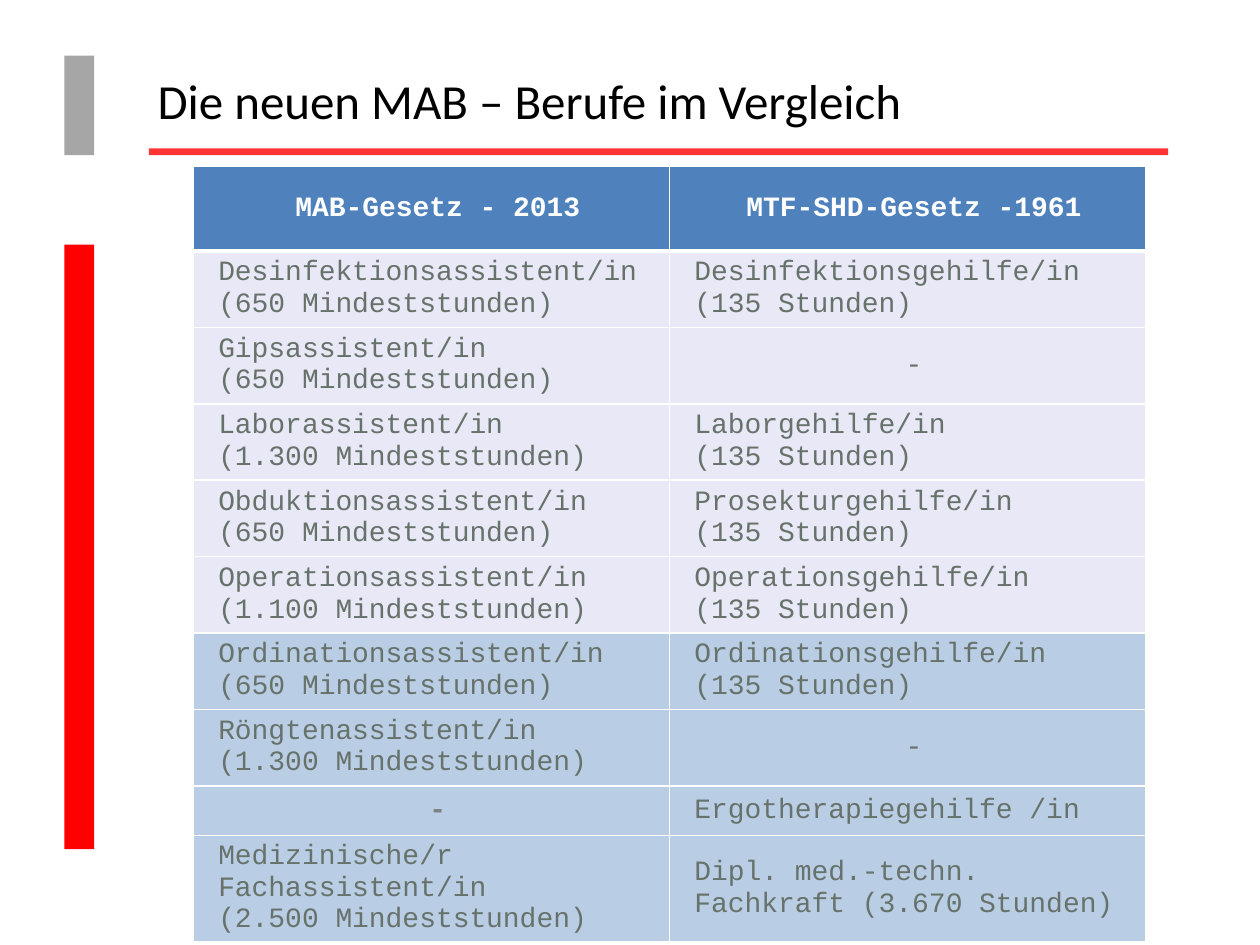
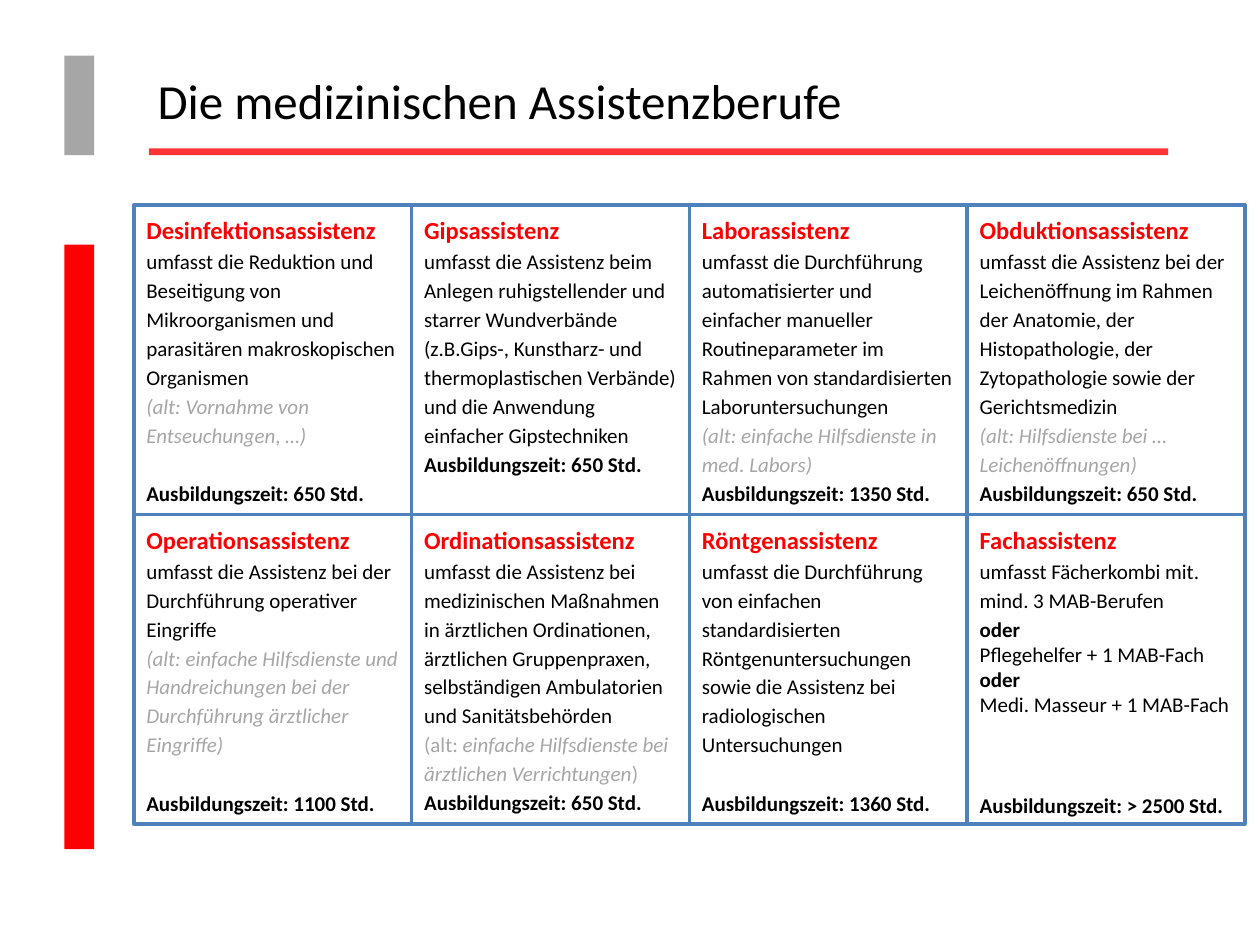
"""Builds two slides that compare the Austrian medical assistant professions."""
import lxml.etree
import pptx
import pptx.dml.color
import pptx.enum.shapes
import pptx.enum.text
import pptx.oxml
import pptx.oxml.ns
import pptx.util
from pptx.util import Cm, Pt

RED, GREY, BLUE, BLACK, WHITE = "FF0000", "A6A6A6", "4F81BD", "000000", "FFFFFF"
RULE_RED, PALE_LILAC, PALE_BLUE, SLATE, DASH_GREY = "FF3333", "E8E8F6", "B9CDE5", "67726B", "808080"

BARS = [
    (1.3, 1.12, 0.6, 2.01, GREY),
    (1.3, 4.93, 0.6, 12.19, RED),
    (3.0, 2.99, 20.55, 0.14, RULE_RED),
]

COMPARISON_TITLE = "Die neuen MAB – Berufe im Vergleich"
COMPARISON_HEADER = [("MAB-Gesetz - 2013",), ("MTF-SHD-Gesetz -1961",)]
COMPARISON = [
    (("Desinfektionsassistent/in", "(650 Mindeststunden)"), ("Desinfektionsgehilfe/in", "(135 Stunden)")),
    (("Gipsassistent/in", "(650 Mindeststunden)"), ("-",)),
    (("Laborassistent/in", "(1.300 Mindeststunden)"), ("Laborgehilfe/in", "(135 Stunden)")),
    (("Obduktionsassistent/in", "(650 Mindeststunden)"), ("Prosekturgehilfe/in", "(135 Stunden)")),
    (("Operationsassistent/in", "(1.100 Mindeststunden)"), ("Operationsgehilfe/in", "(135 Stunden)")),
    (("Ordinationsassistent/in", "(650 Mindeststunden)"), ("Ordinationsgehilfe/in", "(135 Stunden)")),
    (("Röngtenassistent/in", "(1.300 Mindeststunden)"), ("-",)),
    (("-",), ("Ergotherapiegehilfe /in",)),
    (("Medizinische/r Fachassistent/in", "(2.500 Mindeststunden)"),
     ("Dipl. med.-techn. Fachkraft (3.670 Stunden)",)),
]
LILAC_ROWS = 5
ROW_HEIGHTS = [1.7] + [1.54] * 7 + [1.0, 2.15]
TABLE_TEXT_SIZE = 16

PROFESSIONS_TITLE = "Die medizinischen Assistenzberufe"
STYLES = {
    "name": (14, RED, True, False, 1.15),
    "duty": (12, BLACK, False, False, 1.15),
    "former": (12, GREY, False, True, 1.15),
    "time": (12, BLACK, True, False, 1.15),
    "tight": (12, BLACK, False, False, 1.0),
    "tight bold": (12, BLACK, True, False, 1.0),
}
BLANK_LINE = 16.8
PROFESSIONS = [
    [("name", "Desinfektionsassistenz"),
     ("duty", "umfasst die Reduktion und Beseitigung von Mikroorganismen und parasitären "
              "makroskopischen Organismen"),
     ("former", "(alt: Vornahme von Entseuchungen, …)"),
     ("time", "Ausbildungszeit: 650 Std.", BLANK_LINE)],
    [("name", "Gipsassistenz"),
     ("duty", "umfasst die Assistenz beim Anlegen ruhigstellender und starrer Wundverbände "
              "(z.B.Gips-, Kunstharz- und thermoplastischen Verbände) und die Anwendung "
              "einfacher Gipstechniken"),
     ("time", "Ausbildungszeit: 650 Std.")],
    [("name", "Laborassistenz"),
     ("duty", "umfasst die Durchführung automatisierter und einfacher manueller "
              "Routineparameter im Rahmen von standardisierten Laboruntersuchungen"),
     ("former", "(alt: einfache Hilfsdienste in med. Labors)"),
     ("time", "Ausbildungszeit: 1350 Std.")],
    [("name", "Obduktionsassistenz"),
     ("duty", "umfasst die Assistenz bei der Leichenöffnung im Rahmen der Anatomie, der "
              "Histopathologie, der Zytopathologie sowie der Gerichtsmedizin"),
     ("former", "(alt: Hilfsdienste bei … Leichenöffnungen)"),
     ("time", "Ausbildungszeit: 650 Std.")],
    [("name", "Operationsassistenz"),
     ("duty", "umfasst die Assistenz bei der Durchführung operativer Eingriffe"),
     ("former", "(alt: einfache Hilfsdienste und Handreichungen bei der Durchführung "
                "ärztlicher Eingriffe)"),
     ("time", "Ausbildungszeit: 1100 Std.", BLANK_LINE)],
    [("name", "Ordinationsassistenz"),
     ("duty", "umfasst die Assistenz bei medizinischen Maßnahmen in ärztlichen Ordinationen, "
              "ärztlichen Gruppenpraxen, selbständigen Ambulatorien und Sanitätsbehörden"),
     ("former", ("(alt: ", "einfache Hilfsdienste bei ärztlichen Verrichtungen", ")")),
     ("time", "Ausbildungszeit: 650 Std.")],
    [("name", "Röntgenassistenz"),
     ("duty", "umfasst die Durchführung von einfachen standardisierten Röntgenuntersuchungen "
              "sowie die Assistenz bei radiologischen Untersuchungen"),
     ("time", "Ausbildungszeit: 1360 Std.", BLANK_LINE)],
    [("name", "Fachassistenz"),
     ("duty", "umfasst Fächerkombi mit. mind. 3 MAB-Berufen"),
     ("time", "oder"),
     ("tight", "Pflegehelfer + 1 MAB-Fach"),
     ("tight bold", "oder"),
     ("tight", "Medi. Masseur + 1 MAB-Fach"),
     ("tight bold", "Ausbildungszeit: > 2500 Std.", 43)],
]
CARD_COLUMNS = 4
CARD_LEFT, CARD_TOP = 2.7, 4.13
CARD_WIDTH, CARD_HEIGHT = 5.6, 6.24


def color(value):
    return pptx.dml.color.RGBColor.from_string(value)


def set_font(font, name, size, font_color, bold=False, italic=False):
    font.name, font.size, font.bold, font.italic = name, Pt(size), bold, italic
    font.color.rgb = color(font_color)


def add_rectangle(slide, left, top, width, height):
    shape = slide.shapes.add_shape(
        pptx.enum.shapes.MSO_SHAPE.RECTANGLE, Cm(left), Cm(top), Cm(width), Cm(height))
    shape.shadow.inherit = False
    return shape


def add_slide(presentation, title):
    slide = presentation.slides.add_slide(presentation.slide_layouts[6])
    for *place, fill in BARS:
        bar = add_rectangle(slide, *place)
        bar.fill.solid()
        bar.fill.fore_color.rgb = color(fill)
        bar.line.fill.background()
    frame = slide.shapes.add_textbox(Cm(2.93), Cm(1.24), Cm(17.4), Cm(1.55)).text_frame
    frame.word_wrap = True
    frame.vertical_anchor = pptx.enum.text.MSO_ANCHOR.MIDDLE
    frame.text = title
    set_font(frame.paragraphs[0].font, "Calibri", 28, BLACK)
    return slide


def add_borders(cell, top, bottom):
    properties = cell._tc.get_or_add_tcPr()
    for side, points in (("L", 1), ("R", 1), ("T", top), ("B", bottom)):
        properties.append(pptx.oxml.parse_xml(
            f'<a:ln{side} {pptx.oxml.ns.nsdecls("a")} w="{Pt(points)}"><a:solidFill>'
            f'<a:srgbClr val="{WHITE}"/></a:solidFill></a:ln{side}>'))


def add_sized_break(paragraph, size):
    paragraph.add_line_break()
    line_break = paragraph._p.findall(pptx.oxml.ns.qn("a:br"))[-1]
    lxml.etree.SubElement(line_break, pptx.oxml.ns.qn("a:rPr"), sz=str(size * 100))


def fill_cell(cell, lines, row, column):
    header = row == 0
    dash = lines == ("-",)
    bold_dash = dash and column == 0
    add_borders(cell, 3 if row == 1 else 1, 3 if header else 1)
    cell.fill.solid()
    cell.fill.fore_color.rgb = color(
        BLUE if header else PALE_LILAC if row <= LILAC_ROWS else PALE_BLUE)
    cell.vertical_anchor = pptx.enum.text.MSO_ANCHOR.MIDDLE
    cell.margin_left, cell.margin_right = Cm(0.5), Cm(0.25)
    cell.margin_top = cell.margin_bottom = Cm(0.05)
    paragraph = cell.text_frame.paragraphs[0]
    if header or dash:
        paragraph.alignment = pptx.enum.text.PP_ALIGN.CENTER
    set_font(paragraph.font, "Courier New", TABLE_TEXT_SIZE,
             WHITE if header else DASH_GREY if bold_dash else SLATE, header or bold_dash)
    for number, line in enumerate(lines):
        if number:
            add_sized_break(paragraph, TABLE_TEXT_SIZE)
        paragraph.add_run().text = line


def add_comparison(slide):
    rows = [COMPARISON_HEADER, *COMPARISON]
    table = slide.shapes.add_table(
        len(rows), 2, Cm(3.9), Cm(3.36), Cm(19.2), Cm(sum(ROW_HEIGHTS))).table
    table.horz_banding = False
    for row, (cells, height) in enumerate(zip(rows, ROW_HEIGHTS)):
        table.rows[row].height = Cm(height)
        for column, lines in enumerate(cells):
            fill_cell(table.cell(row, column), lines, row, column)


def add_card(slide, left, top, entries):
    card = add_rectangle(slide, left, top, CARD_WIDTH, CARD_HEIGHT)
    card.fill.background()
    card.line.color.rgb = color(BLUE)
    card.line.width = Pt(2)
    frame = card.text_frame
    frame.word_wrap = True
    frame.vertical_anchor = pptx.enum.text.MSO_ANCHOR.TOP
    for number, (style, text, *gap) in enumerate(entries):
        paragraph = frame.add_paragraph() if number else frame.paragraphs[0]
        size, font_color, bold, italic, spacing = STYLES[style]
        paragraph.alignment = pptx.enum.text.PP_ALIGN.LEFT
        paragraph.line_spacing = spacing
        if gap:
            paragraph.space_before = Pt(gap[0])
        set_font(paragraph.font, "Calibri", size, font_color, bold, italic)
        if isinstance(text, str):
            paragraph.add_run().text = text
            continue
        for position, part in enumerate(text):
            run = paragraph.add_run()
            run.text = part
            run.font.italic = position % 2 == 1


def add_professions(slide):
    for number, entries in enumerate(PROFESSIONS):
        row, column = divmod(number, CARD_COLUMNS)
        add_card(slide, CARD_LEFT + column * CARD_WIDTH, CARD_TOP + row * CARD_HEIGHT, entries)


def main():
    presentation = pptx.Presentation()
    presentation.slide_width, presentation.slide_height = Cm(25.4), Cm(19.05)
    add_comparison(add_slide(presentation, COMPARISON_TITLE))
    add_professions(add_slide(presentation, PROFESSIONS_TITLE))
    presentation.save("out.pptx")


if __name__ == "__main__":
    main()
